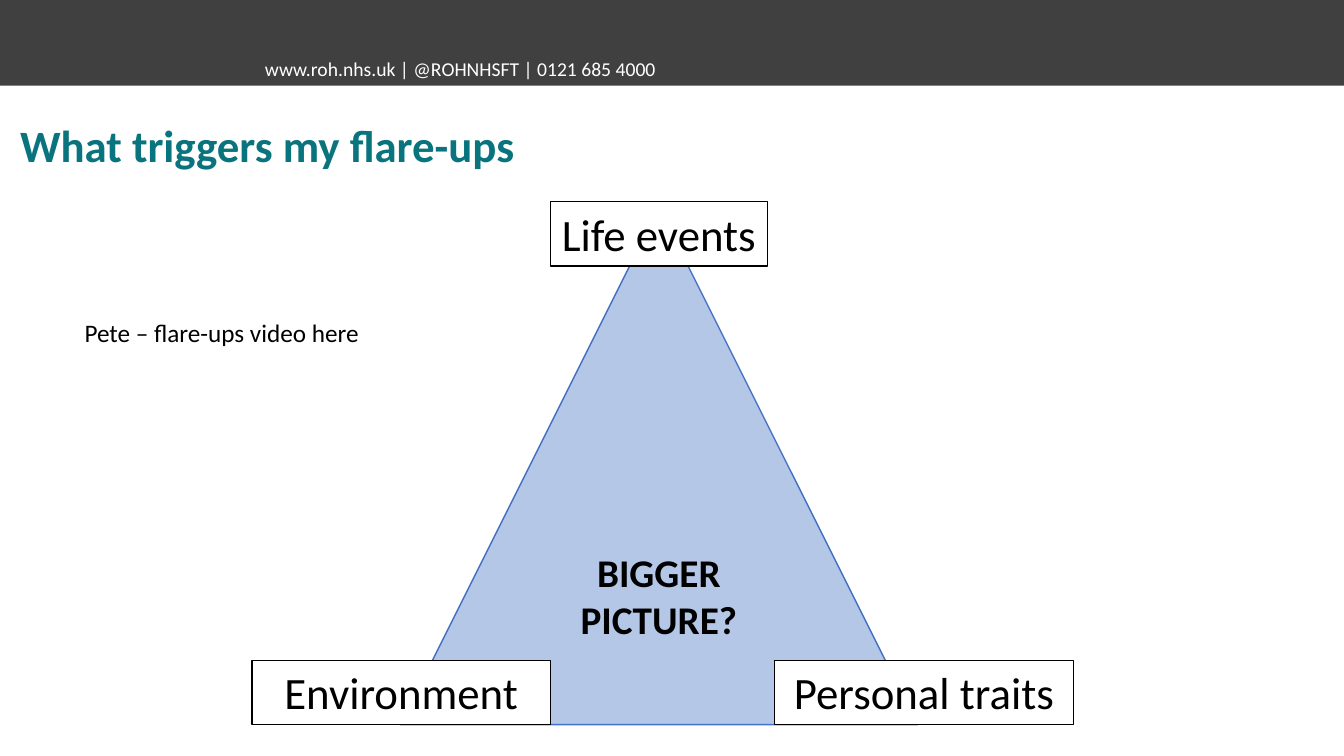
from pptx import Presentation
from pptx.dml.color import RGBColor
from pptx.enum.shapes import MSO_SHAPE as SHAPE
from pptx.enum.text import MSO_ANCHOR as ANCHOR, PP_ALIGN as ALIGN
from pptx.util import Pt

PX = 9144
WHITE = RGBColor(0xFF, 0xFF, 0xFF)
BLACK = RGBColor(0, 0, 0)
CHARCOAL = RGBColor(0x40, 0x40, 0x40)
TEAL = RGBColor(0x09, 0x74, 0x7D)
PALE_BLUE = RGBColor(0xB4, 0xC7, 0xE7)
BLUE = RGBColor(0x44, 0x72, 0xC4)


def emu(*lengths):
    return [n * PX for n in lengths]


def write(sp, text, size, color, bold=False, align=ALIGN.LEFT, anchor=ANCHOR.TOP, wrap=True):
    tf = sp.text_frame
    tf.text = text
    tf.word_wrap = wrap
    tf.vertical_anchor = anchor
    p = tf.paragraphs[0]
    p.alignment = align
    font = p.runs[0].font
    font.name = "Calibri"
    font.size = Pt(size)
    font.bold = bold
    font.color.rgb = color


def add_label(s, box, text, size, color, **style):
    write(s.shapes.add_textbox(*emu(*box)), text, size, color, **style)


def add_panel(s, kind, box, fill, line=None):
    sp = s.shapes.add_shape(kind, *emu(*box))
    sp.shadow.inherit = False
    sp.fill.solid()
    sp.fill.fore_color.rgb = fill
    if line is None:
        sp.line.fill.background()
    else:
        sp.line.color.rgb = line
        sp.line.width = Pt(1)
    return sp


def add_header(s, x, y, w, h):
    add_panel(s, SHAPE.RECTANGLE, (x, y, w, h), CHARCOAL)
    add_label(s, (x + 253, y + h - 33, 413, 34),
              "www.roh.nhs.uk | @ROHNHSFT | 0121 685 4000", 14, WHITE)


def add_trigger_triangle(s, x, y, w, h):
    triangle = add_panel(s, SHAPE.ISOSCELES_TRIANGLE, (x, y, w, h), PALE_BLUE, BLUE)
    triangle.adjustments[0] = 0.5
    write(triangle, "BIGGER PICTURE?", 28, BLACK, bold=True,
          align=ALIGN.CENTER, anchor=ANCHOR.MIDDLE)
    box_h = 64
    base_y = y + h - box_h
    corners = [
        ("Personal traits", x + 371, base_y, 297, True),
        ("Environment", x - 147, base_y, 296, True),
        ("Life events", x + 149, y - 6, 215, False),
    ]
    for text, left, top, width, wrap in corners:
        sp = add_panel(s, SHAPE.RECTANGLE, (left, top, width, box_h), WHITE, BLACK)
        write(sp, text, 32, BLACK, align=ALIGN.CENTER, wrap=wrap)


def main():
    prs = Presentation()
    prs.slide_width, prs.slide_height = emu(1333, 750)
    s = prs.slides.add_slide(prs.slide_layouts[6])
    add_header(s, 0, 0, 1333, 85)
    add_label(s, (10, 112, 1295, 64), "What triggers my flare-ups", 32, TEAL, bold=True)
    add_trigger_triangle(s, 397, 206, 513, 513)
    add_label(s, (74, 310, 296, 40), "Pete – flare-ups video here", 18, BLACK, wrap=False)
    prs.save("out.pptx")


if __name__ == "__main__":
    main()
